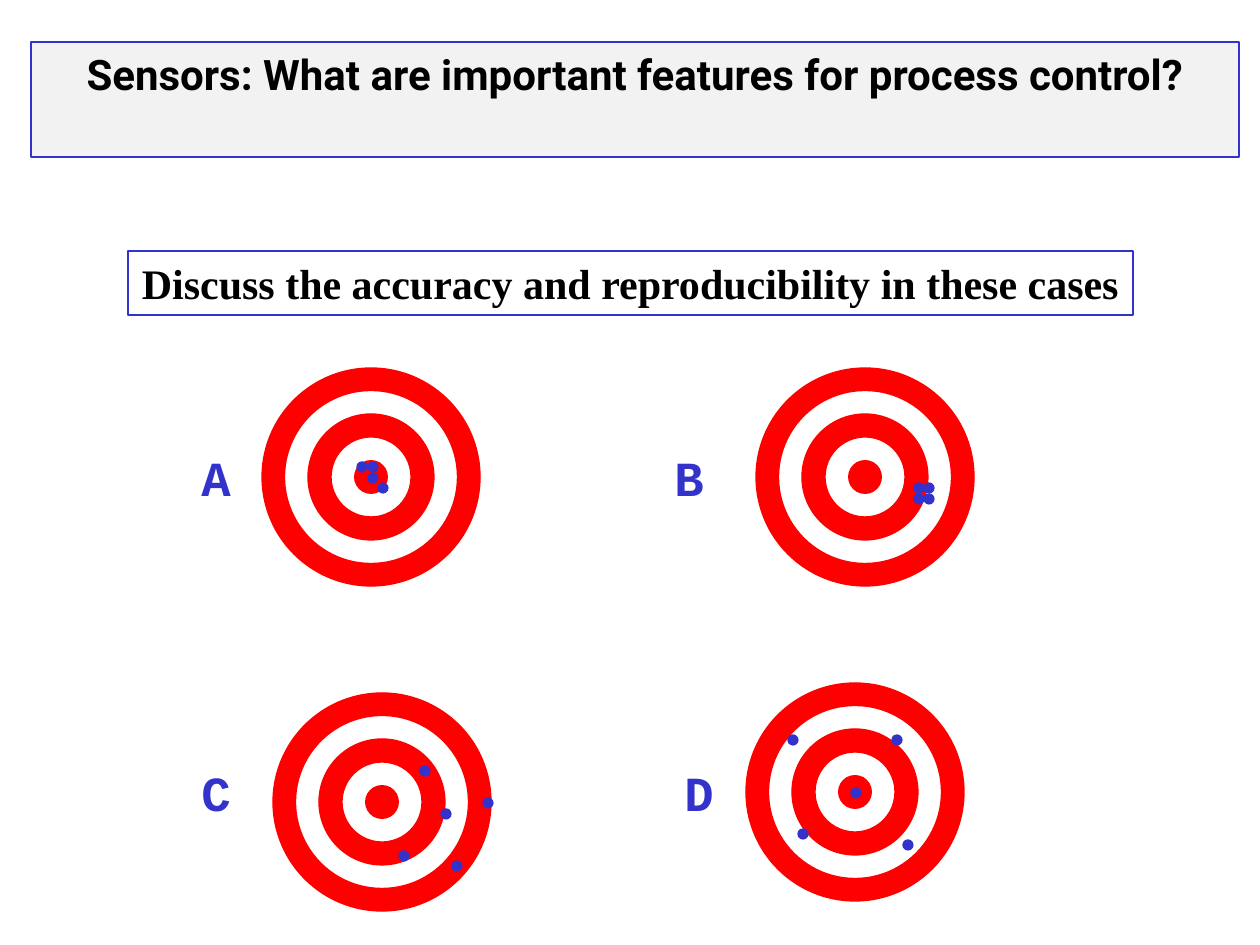
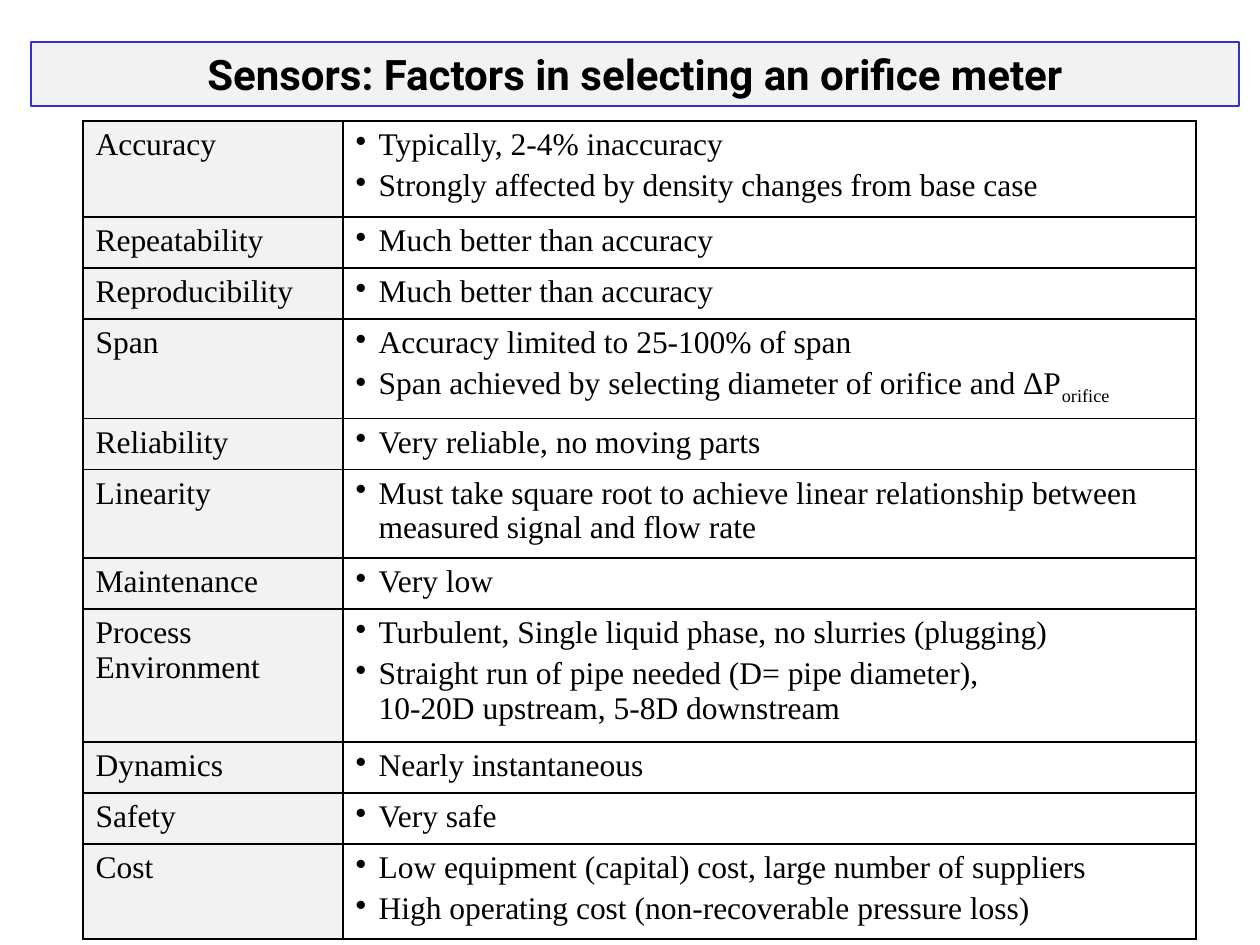
"""Build two slides on sensor accuracy and orifice meter selection."""
from dataclasses import dataclass

from lxml import etree
from pptx import Presentation
from pptx.dml.color import RGBColor
from pptx.enum.shapes import MSO_SHAPE
from pptx.enum.text import MSO_ANCHOR, PP_ALIGN
from pptx.oxml.ns import qn
from pptx.util import Emu, Pt

RECTANGLE, OVAL = MSO_SHAPE.RECTANGLE, MSO_SHAPE.OVAL
TOP, MIDDLE = MSO_ANCHOR.TOP, MSO_ANCHOR.MIDDLE
LEFT, CENTER = PP_ALIGN.LEFT, PP_ALIGN.CENTER

TARGETS_TITLE = "Sensors: What are important features for process control?"
FACTORS_TITLE = "Sensors: Factors in selecting an orifice meter"
QUESTION = "Discuss the accuracy and reproducibility in these cases"

CASES = [
    {"label": "A", "label_at": (189, 441), "center": (371, 477),
     "hits": [(383, 488), (373, 478), (362, 467), (373, 467)]},
    {"label": "B", "label_at": (662, 441), "center": (865, 477),
     "hits": [(919, 488), (919, 499), (929, 488), (929, 499)]},
    {"label": "C", "label_at": (189, 756), "center": (382, 802),
     "hits": [(425, 771), (404, 856), (488, 803), (457, 866), (446, 814)]},
    {"label": "D", "label_at": (672, 756), "center": (855, 792),
     "hits": [(793, 740), (908, 845), (803, 834), (897, 740), (856, 793)]},
]

FACTORS = [
    ("Accuracy", 96, ["Typically, 2-4% inaccuracy",
                      "Strongly affected by density changes from base case"]),
    ("Repeatability", 51, ["Much better than accuracy"]),
    ("Reproducibility", 51, ["Much better than accuracy"]),
    ("Span", 99, ["Accuracy limited to 25-100% of span",
                  ("Span achieved by selecting diameter of orifice and ΔP", "orifice")]),
    ("Reliability", 51, ["Very reliable, no moving parts"]),
    ("Linearity", 88, ["Must take square root to achieve linear relationship between "
                       "measured signal and flow rate"]),
    ("Maintenance", 51, ["Very low"]),
    ("Process Environment", 133,
     ["Turbulent, Single liquid phase, no slurries (plugging)",
      "Straight run of pipe needed (D= pipe diameter),\v10-20D upstream, 5-8D downstream"]),
    ("Dynamics", 51, ["Nearly instantaneous"]),
    ("Safety", 51, ["Very safe"]),
    ("Cost", 95, ["Low equipment (capital) cost, large number of suppliers",
                  "High operating cost (non-recoverable pressure loss)"]),
]

SLIDE_SIZE = (1260, 945)
TITLE_AT = (31, 42, 1208)
QUESTION_BOX = (128, 251, 1005, 64)
LABEL_SIZE = (54, 72)
RING_DIAMETERS = [218, 173, 126, 80, 34]
HIT_DIAMETER = 10
TABLE_AT = (83, 121)
COLUMN_WIDTHS = [260, 853]
BULLET_INDENT = 23


@dataclass(frozen=True)
class Theme:
    """Colours and type of the deck."""
    blue: RGBColor = RGBColor(0x33, 0x33, 0xCC)
    red: RGBColor = RGBColor(0xFF, 0, 0)
    white: RGBColor = RGBColor(0xFF, 0xFF, 0xFF)
    gray: RGBColor = RGBColor(0xF2, 0xF2, 0xF2)
    black: RGBColor = RGBColor(0, 0, 0)
    outline: Pt = Pt(0.75)
    border: Pt = Pt(1)
    bullet_gap: Pt = Pt(3.6)


THEME = Theme()
TITLE_FONT = {"name": "Roboto", "size": Pt(24), "bold": True}
QUESTION_FONT = {"name": "Times New Roman", "size": Pt(24), "bold": True}
LABEL_FONT = {"name": "Courier New", "size": Pt(28), "bold": True}
CELL_FONT = {"name": "Times New Roman", "size": Pt(18), "bold": False}


def px(length):
    """Turn pixels into EMU."""
    return Emu(round(length * 914400 / 126))


def apply(target, values):
    """Set each named attribute on the target."""
    for name, value in values.items():
        setattr(target, name, value)


def paint(shape, fill=None, line=None):
    """Give a shape its fill and outline, or none."""
    shape.shadow.inherit = False
    if fill is None:
        shape.fill.background()
    else:
        shape.fill.solid()
        shape.fill.fore_color.rgb = fill
    if line is None:
        shape.line.fill.background()
    else:
        shape.line.color.rgb = line
        shape.line.width = THEME.outline


def write(paragraph, text, font, color=THEME.black, subscript="", align=LEFT):
    """Write styled text with an optional subscript."""
    paragraph.alignment = align
    for index, line in enumerate(text.split("\v")):
        if index:
            paragraph.add_line_break()
        paragraph.add_run().text = line
    if subscript:
        small = paragraph.add_run()
        small.text = subscript
        small._r.get_or_add_rPr().set("baseline", "-25000")
    for run in paragraph.runs:
        apply(run.font, font)
        run.font.color.rgb = color


def add_box(slide, box, text, font, fill=None, anchor=MIDDLE, wrap=False):
    """Add an outlined box with one centred line."""
    panel = slide.shapes.add_shape(RECTANGLE, *map(px, box))
    paint(panel, fill, THEME.blue)
    apply(panel.text_frame, {"word_wrap": wrap, "vertical_anchor": anchor})
    write(panel.text_frame.paragraphs[0], text, font, align=CENTER)


def add_title(slide, title, height):
    """Add the title band."""
    add_box(slide, (*TITLE_AT, height), title, TITLE_FONT, THEME.gray, TOP, True)


def add_disc(group, center, diameter, fill, line):
    """Add a circle around its centre."""
    left, top = (px(middle - diameter / 2) for middle in center)
    disc = group.shapes.add_shape(OVAL, left, top, px(diameter), px(diameter))
    paint(disc, fill, line)


def add_case(slide, case):
    """Add one target with its hits and letter."""
    target = slide.shapes.add_group_shape()
    for index, diameter in enumerate(RING_DIAMETERS):
        bullseye = diameter == RING_DIAMETERS[-1]
        add_disc(target, case["center"], diameter,
                 THEME.white if index % 2 else THEME.red,
                 None if bullseye else THEME.red)
    for hit in case["hits"]:
        add_disc(target, hit, HIT_DIAMETER, THEME.blue, THEME.blue)
    letter = slide.shapes.add_textbox(*map(px, case["label_at"] + LABEL_SIZE))
    apply(letter.text_frame, {"word_wrap": False, "vertical_anchor": MIDDLE})
    write(letter.text_frame.paragraphs[0], case["label"], LABEL_FONT, THEME.blue, align=CENTER)


def add_bullet(paragraph):
    """Give a paragraph a hanging bullet."""
    properties = paragraph._p.get_or_add_pPr()
    properties.set("marL", str(px(BULLET_INDENT)))
    properties.set("indent", str(-px(BULLET_INDENT)))
    etree.SubElement(properties, qn("a:buChar"), char="•")


def add_borders(cell):
    """Draw the four cell borders."""
    properties = cell._tc.get_or_add_tcPr()
    for side in ("lnL", "lnR", "lnT", "lnB"):
        edge = etree.SubElement(properties, qn(f"a:{side}"), w=str(THEME.border))
        fill = etree.SubElement(edge, qn("a:solidFill"))
        etree.SubElement(fill, qn("a:srgbClr"), val=str(THEME.black))


def add_factors(slide):
    """Add the table of selection factors."""
    size = sum(COLUMN_WIDTHS), sum(height for _, height, _ in FACTORS)
    table = slide.shapes.add_table(
        len(FACTORS), len(COLUMN_WIDTHS), *map(px, TABLE_AT + size)).table
    apply(table, {"first_row": False, "horz_banding": False})
    for column, width in zip(table.columns, COLUMN_WIDTHS):
        column.width = px(width)
    for row, (factor, height, remarks) in zip(table.rows, FACTORS):
        row.height = px(height)
        factor_cell, remark_cell = row.cells
        for cell in row.cells:
            add_borders(cell)
        factor_cell.fill.solid()
        factor_cell.fill.fore_color.rgb = THEME.gray
        remark_cell.fill.background()
        write(factor_cell.text_frame.paragraphs[0], factor, CELL_FONT)
        frame = remark_cell.text_frame
        for index, remark in enumerate(remarks):
            text, subscript = (remark, "") if isinstance(remark, str) else remark
            paragraph = frame.add_paragraph() if index else frame.paragraphs[0]
            paragraph.space_before = THEME.bullet_gap
            write(paragraph, text, CELL_FONT, subscript=subscript)
            add_bullet(paragraph)


def main():
    """Build and save the deck."""
    deck = Presentation()
    deck.slide_width, deck.slide_height = map(px, SLIDE_SIZE)
    blank = deck.slide_layouts[6]

    targets = deck.slides.add_slide(blank)
    for case in CASES:
        add_case(targets, case)
    add_box(targets, QUESTION_BOX, QUESTION, QUESTION_FONT)
    add_title(targets, TARGETS_TITLE, 115)

    factors = deck.slides.add_slide(blank)
    add_factors(factors)
    add_title(factors, FACTORS_TITLE, 64)
    deck.save("out.pptx")


if __name__ == "__main__":
    main()
